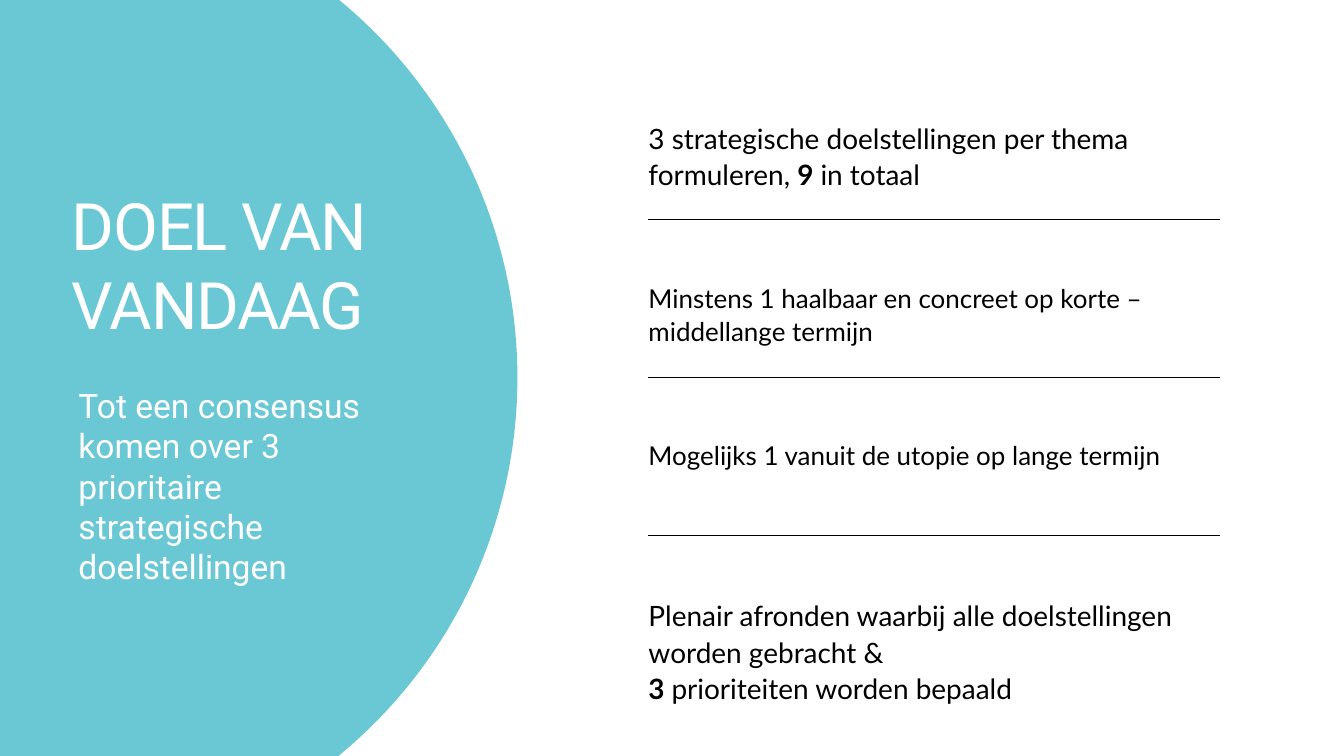
from lxml import etree
from pptx import Presentation
from pptx.dml.color import RGBColor
from pptx.enum.shapes import MSO_CONNECTOR, MSO_SHAPE
from pptx.enum.text import MSO_ANCHOR, MSO_AUTO_SIZE, PP_ALIGN
from pptx.oxml.ns import qn
from pptx.util import Inches, Pt

LINE, OVAL = MSO_CONNECTOR.STRAIGHT, MSO_SHAPE.OVAL
TOP, LEFT, FIXED = MSO_ANCHOR.TOP, PP_ALIGN.LEFT, MSO_AUTO_SIZE.NONE
TEAL = RGBColor(0x6A, 0xC7, 0xD4)
WHITE = RGBColor(255, 255, 255)
BLACK = RGBColor(0, 0, 0)

TITLE = [[("DOEL VAN VANDAAG", False)]]
GOAL = [[("Tot een consensus komen over 3 prioritaire strategische doelstellingen", False)]]
BIG = {"size": Pt(30), "lead": Pt(39)}
SMALL = {"size": Pt(27.8), "lead": Pt(36.1)}
STEPS = [
    (1.76, 8.77, 1.05, BIG, [[
        ("3 strategische doelstellingen per thema formuleren, ", False),
        ("9 ", True), ("in totaal", False)]]),
    (4.16, 8.52, 0.97, SMALL, [[
        ("Minstens 1 haalbaar en concreet op korte – middellange termijn", False)]]),
    (6.51, 8.52, 1.01, SMALL, [[
        ("Mogelijks 1 vanuit de utopie op lange termijn", False)]]),
    (8.87, 8.52, 1.6, BIG, [
        [("Plenair afronden waarbij alle doelstellingen worden gebracht &", False)],
        [("3 ", True), ("prioriteiten worden bepaald", False)]]),
]
STEP_X, RULE_END = 9.65, 18.16
RULE_TOP, RULE_GAP = 3.26, 2.355
DISC = (-6.86, -1.66, 14.56, 14.56)


def apply(obj, **vals):
    for key, val in vals.items():
        setattr(obj, key, val)


def place(shape, box):
    names = ("left", "top", "width", "height")
    apply(shape, **dict(zip(names, map(Inches, box))))


def write(shape, paras, name, size, color, lead=None, pad=(0, 0), track=0):
    frame = shape.text_frame
    side, edge = map(Inches, pad)
    apply(frame, word_wrap=True, auto_size=FIXED, vertical_anchor=TOP,
          margin_left=side, margin_right=side, margin_top=edge, margin_bottom=edge)
    for i, runs in enumerate(paras):
        para = frame.add_paragraph() if i else frame.paragraphs[0]
        apply(para, alignment=LEFT, line_spacing=lead)
        for text, bold in runs:
            run = para.add_run()
            run.text = text
            apply(run.font, name=name, size=size, bold=bold)
            run.font.color.rgb = color
            if track:
                run.font._element.set("spc", str(track))


def main():
    deck = Presentation()
    apply(deck, slide_width=Inches(20), slide_height=Inches(11.25))
    slide = deck.slides.add_slide(deck.slide_layouts[5])
    shapes = slide.shapes
    title = shapes.title

    disc = shapes.add_shape(OVAL, *map(Inches, DISC))
    disc.shadow.inherit = False
    disc.fill.solid()
    disc.fill.fore_color.rgb = TEAL
    disc.line.fill.background()
    title._element.addprevious(disc._element)

    place(title, (1.07, 2.76, 5.37, 2.31))
    write(title, TITLE, "Roboto", Pt(70), WHITE, lead=Pt(84), track=-140)

    for top, width, height, style, paras in STEPS:
        box = shapes.add_textbox(*map(Inches, (STEP_X, top, width, height)))
        write(box, paras, "Lato", color=BLACK, **style)

    for i in range(len(STEPS) - 1):
        y = RULE_TOP + i * RULE_GAP
        rule = shapes.add_connector(LINE, *map(Inches, (STEP_X, y, RULE_END, y)))
        rule.line.color.rgb = BLACK
        rule.line.width = Pt(0.75)
        etree.SubElement(rule._element.spPr, qn("a:effectLst"))

    goal = shapes.add_textbox(*map(Inches, (1.07, 5.68, 4.93, 2.52)))
    write(goal, GOAL, "Roboto", Pt(36), WHITE, pad=(0.1, 0.05))

    deck.save("out.pptx")


if __name__ == "__main__":
    main()
